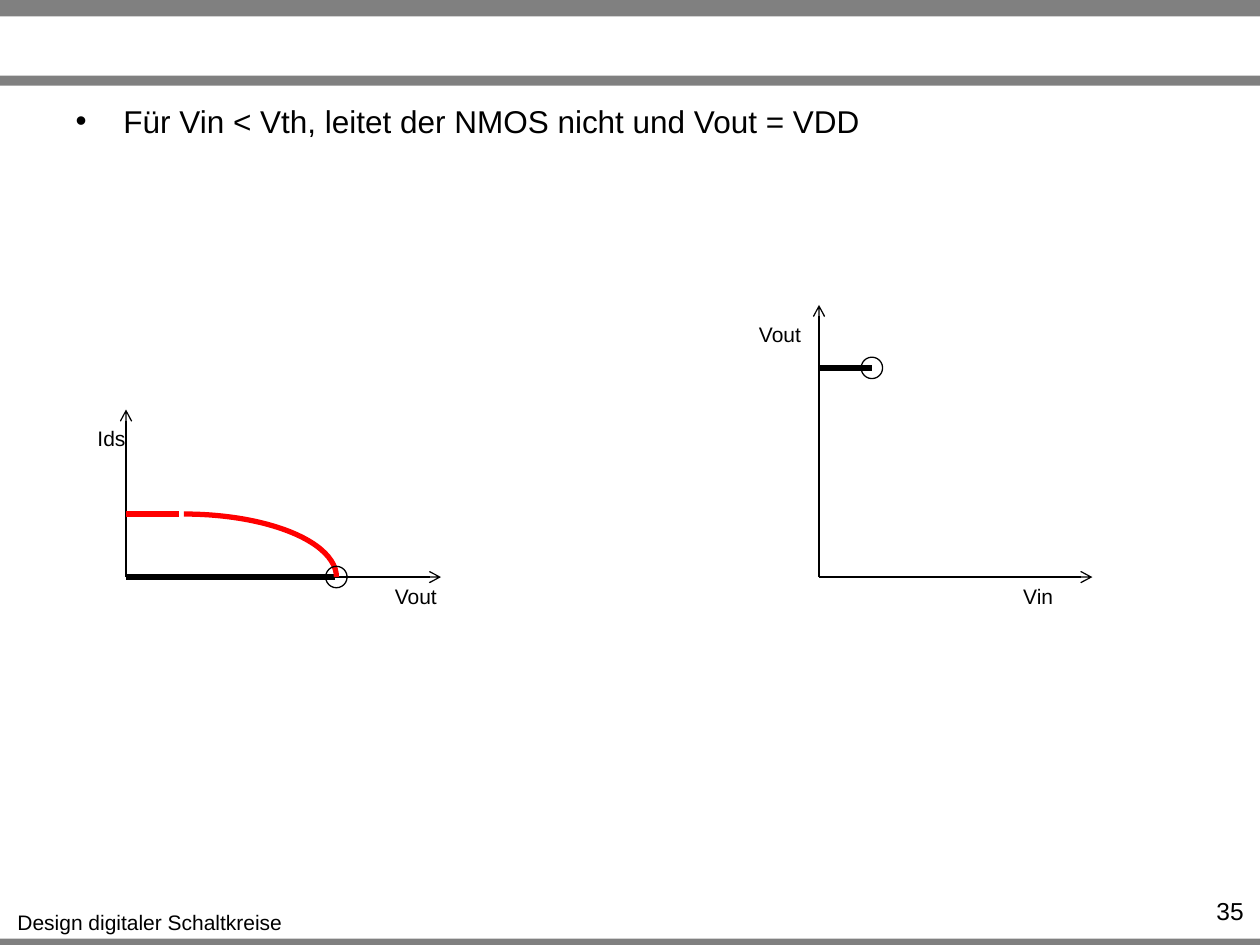
from dataclasses import dataclass

from lxml import etree
from pptx import Presentation
from pptx.dml.color import RGBColor
from pptx.enum.shapes import MSO_CONNECTOR, MSO_SHAPE
from pptx.enum.text import MSO_AUTO_SIZE, PP_ALIGN
from pptx.oxml.ns import qn
from pptx.util import Inches, Pt


@dataclass(frozen=True)
class Theme:
    font: str = "Arial"
    ink: RGBColor = RGBColor(0x00, 0x00, 0x00)
    load_curve: RGBColor = RGBColor(0xFF, 0x00, 0x00)
    bar: RGBColor = RGBColor(0x80, 0x80, 0x80)
    body_size: int = 18
    number_size: int = 14
    label_size: int = 12
    thin: float = 0.75
    thick: float = 3


class SlideBuilder:
    def __init__(self, slide, theme):
        self.slide = slide
        self.theme = theme

    def style_font(self, font, size):
        font.name = self.theme.font
        font.size = Pt(size)
        font.color.rgb = self.theme.ink

    def bar(self, top, height):
        band = self.slide.shapes.add_shape(
            MSO_SHAPE.RECTANGLE, 0, Inches(top), Inches(10), Inches(height))
        band.shadow.inherit = False
        band.fill.solid()
        band.fill.fore_color.rgb = self.theme.bar
        band.line.fill.background()

    def bullet(self, text, left, top, width, height):
        """Fill the body placeholder with one bulleted paragraph."""
        body = self.slide.placeholders[1]
        body.left, body.top = Inches(left), Inches(top)
        body.width, body.height = Inches(width), Inches(height)
        body.text_frame.text = text
        paragraph = body.text_frame.paragraphs[0]
        paragraph.space_before = Pt(0)
        properties = paragraph._p.get_or_add_pPr()
        indent = Inches(0.38)
        properties.set("marL", str(indent))
        properties.set("indent", str(-indent))
        etree.SubElement(properties, qn("a:buChar")).set("char", "•")
        self.style_font(paragraph.runs[0].font, self.theme.body_size)

    def text(self, text, left, top, width, height, size, align, wrap):
        box = self.slide.shapes.add_textbox(
            Inches(left), Inches(top), Inches(width), Inches(height))
        frame = box.text_frame
        frame.word_wrap = wrap
        if not wrap:
            frame.auto_size = MSO_AUTO_SIZE.SHAPE_TO_FIT_TEXT
        frame.text = text
        paragraph = frame.paragraphs[0]
        paragraph.alignment = align
        self.style_font(paragraph.runs[0].font, size)

    def label(self, text, left, top, width):
        self.text(text, left, top, width, 0.3, self.theme.label_size,
                  PP_ALIGN.CENTER, False)

    def line(self, start, end, weight, color):
        connector = self.slide.shapes.add_connector(
            MSO_CONNECTOR.STRAIGHT, *map(Inches, start + end))
        connector.line.width = Pt(weight)
        connector.line.color.rgb = color
        etree.SubElement(connector._element.spPr, qn("a:effectLst"))
        return connector

    def axis(self, start, end):
        arrow = self.line(start, end, self.theme.thin, self.theme.ink)
        tail = etree.SubElement(arrow.line._get_or_add_ln(), qn("a:tailEnd"))
        tail.set("type", "arrow")

    def outline(self, preset, left, top, width, height, weight, color):
        curve = self.slide.shapes.add_shape(
            preset, Inches(left), Inches(top), Inches(width), Inches(height))
        curve.shadow.inherit = False
        curve.fill.background()
        curve.line.width = Pt(weight)
        curve.line.color.rgb = color

    def operating_point(self, x, y):
        diameter = 0.17
        self.outline(MSO_SHAPE.OVAL, x - diameter / 2, y - diameter / 2,
                     diameter, diameter, self.theme.thin, self.theme.ink)


def draw_load_line(page, x, y):
    """Ids over Vout, with the origin at (x, y)."""
    theme = page.theme
    saturation = y - 0.5
    page.axis((x, y), (x + 2.5, y))
    page.axis((x, y), (x, y - 1.33))
    page.label("Ids", x - 0.33, y - 1.25, 0.43)
    page.label("Vout", x + 2.03, y, 0.54)
    page.line((x, y), (x + 1.66, y), theme.thick, theme.ink)
    page.outline(MSO_SHAPE.ARC, x - 0.75, saturation, 2.42, 1,
                 theme.thick, theme.load_curve)
    page.line((x, saturation), (x + 0.42, saturation),
              theme.thick, theme.load_curve)
    page.operating_point(x + 1.67, y)


def draw_transfer_curve(page, x, y):
    """Vout over Vin, with the origin at (x, y)."""
    theme = page.theme
    supply = y - 1.66
    page.axis((x, y), (x + 2.17, y))
    page.axis((x, y), (x, y - 2.16))
    page.label("Vout", x - 0.58, y - 2.08, 0.54)
    page.label("Vin", x + 1.52, y, 0.44)
    page.line((x, supply), (x + 0.42, supply), theme.thick, theme.ink)
    page.operating_point(x + 0.42, supply)


def main():
    presentation = Presentation()
    presentation.slide_width, presentation.slide_height = Inches(10), Inches(7.5)
    slide = presentation.slides.add_slide(presentation.slide_layouts[1])
    empty_title = slide.shapes.title._element
    empty_title.getparent().remove(empty_title)

    page = SlideBuilder(slide, Theme())
    for top, height in ((7.45, 0.05), (0, 0.13), (0.6, 0.08)):
        page.bar(top, height)
    page.label("Design digitaler Schaltkreise", 0.03, 7.17, 2.32)
    page.bullet("Für Vin < Vth, leitet der NMOS nicht und Vout = VDD",
                0.5, 0.76, 9, 0.66)
    page.text("35", 9.1, 7.06, 0.87, 0.24, page.theme.number_size,
              PP_ALIGN.RIGHT, True)
    draw_load_line(page, 1, 4.58)
    draw_transfer_curve(page, 6.5, 4.58)
    presentation.save("out.pptx")


if __name__ == "__main__":
    main()
